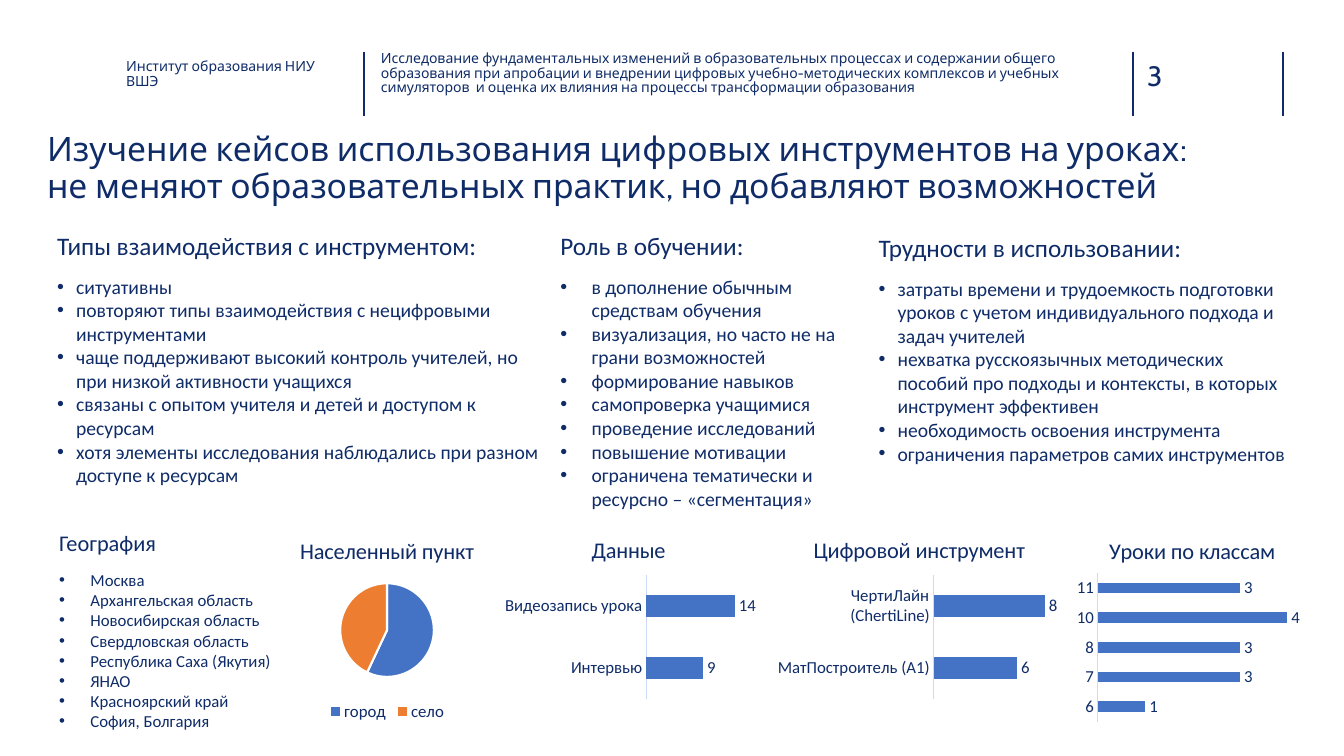
from lxml import etree
from pptx import Presentation
from pptx.chart.data import CategoryChartData
from pptx.dml.color import RGBColor
from pptx.enum.chart import XL_CHART_TYPE, XL_LABEL_POSITION, XL_LEGEND_POSITION, XL_TICK_MARK
from pptx.enum.shapes import MSO_CONNECTOR
from pptx.oxml import parse_xml
from pptx.oxml.ns import qn
from pptx.util import Cm, Pt

PIE = XL_CHART_TYPE.PIE
BAR = XL_CHART_TYPE.BAR_CLUSTERED
OUTSIDE = XL_LABEL_POSITION.OUTSIDE_END
BOTTOM = XL_LEGEND_POSITION.BOTTOM
NO_TICK = XL_TICK_MARK.NONE
STRAIGHT = MSO_CONNECTOR.STRAIGHT
CHART_NAMESPACE = "http://schemas.openxmlformats.org/drawingml/2006/chart"
NAVY, BLUE, ORANGE, PALE, WHITE = "0F2C68", "4472C4", "ED7D31", "CCDAF8", "FFFFFF"
HEADING_FONT, BODY_FONT = "Cabin", "Calibri"


def color(value):
    """Turn a hex string into a colour."""
    return RGBColor.from_string(value)


def style_font(font, size, name=BODY_FONT):
    """Set the face, size and navy colour of a font."""
    font.name, font.size, font.bold = name, Pt(size), False
    font.color.rgb = color(NAVY)


def write(para, text, size, name=BODY_FONT, spacing=None, after=0, bullet_indent=None):
    """Write formatted text into a paragraph, with line breaks and an optional bullet."""
    para.space_after = Pt(after)
    if spacing:
        para.line_spacing = spacing
    if bullet_indent:
        properties = para._p.get_or_add_pPr()
        properties.set("marL", str(Cm(bullet_indent)))
        properties.set("indent", str(-Cm(bullet_indent)))
        etree.SubElement(properties, qn("a:buFont")).set("typeface", "Arial")
        etree.SubElement(properties, qn("a:buChar")).set("char", "•")
    for number, line in enumerate(text.split("\n")):
        if number:
            para.add_line_break()
        span = para.add_run()
        span.text = line
        style_font(span.font, size, name)


def add_frame(page, area, margins=True):
    """Add a wrapping text box and return its text frame."""
    frame = page.shapes.add_textbox(*map(Cm, area)).text_frame
    frame.word_wrap = True
    if not margins:
        frame.margin_left = frame.margin_right = frame.margin_top = frame.margin_bottom = 0
    return frame


def add_label(page, area, text, size, spacing=0.9):
    """Add a marginless text in the heading font."""
    frame = add_frame(page, area, margins=False)
    write(frame.paragraphs[0], text, size, HEADING_FONT, spacing)


def add_header(page, area):
    """Add the institute, project name and page number between vertical rules."""
    left, top, width, height = area
    for offset in (5.99, 25.37, width):
        rule = page.shapes.add_connector(
            STRAIGHT, Cm(left + offset), Cm(top), Cm(left + offset), Cm(top + height))
        rule.line.color.rgb = color(NAVY)
        rule.line.width = Pt(1)
        etree.SubElement(rule._element.spPr, qn("a:effectLst"))
    add_label(page, (left, top + 0.2, 5.28, 1.14), "Институт образования НИУ ВШЭ", 10)
    add_label(page, (left + 6.42, top, 18.44, 1.85),
              "Исследование фундаментальных изменений в образовательных процессах и содержании "
              "общего образования при апробации и внедрении цифровых учебно-методических "
              "комплексов и учебных симуляторов\u00a0 и оценка их влияния на процессы "
              "трансформации образования", 10, 0.88)
    add_label(page, (left + 25.73, top + 0.17, 1.85, 0.86), "3", 20, 1)


def add_list(page, area, heading, items, heading_size=18, item_size=14, indent=0.48):
    """Add a heading with a bulleted list under it."""
    frame = add_frame(page, area)
    write(frame.paragraphs[0], heading, heading_size, after=9.8)
    for item in items:
        write(frame.add_paragraph(), item, item_size, bullet_indent=indent)


def set_plot_layout(chart, x, y, width, height):
    """Fix the inner plot area as fractions of the chart."""
    plot_area = chart._chartSpace.chart.plotArea
    for old in plot_area.findall(qn("c:layout")):
        plot_area.remove(old)
    values = (("layoutTarget", "inner"), ("xMode", "edge"), ("yMode", "edge"),
              ("x", x), ("y", y), ("w", width), ("h", height))
    inner = "".join(f'<c:{tag} val="{value}"/>' for tag, value in values)
    plot_area.insert(0, parse_xml(
        f'<c:layout xmlns:c="{CHART_NAMESPACE}"><c:manualLayout>{inner}'
        "</c:manualLayout></c:layout>"))


def add_chart(page, area, kind, title, values, layout):
    """Add a titled chart with one series and return it."""
    data = CategoryChartData()
    data.categories = list(values)
    data.add_series(title, list(values.values()))
    chart = page.shapes.add_chart(kind, *map(Cm, area), data).chart
    style_font(chart.font, 12)
    chart.has_title = True
    write(chart.chart_title.text_frame.paragraphs[0], title, 16)
    chart.has_legend = kind == PIE
    set_plot_layout(chart, *layout)
    return chart


def add_pie(page, area, title, values, layout):
    """Add a pie chart with a legend below."""
    chart = add_chart(page, area, PIE, title, values, layout)
    chart.legend.position = BOTTOM
    chart.legend.include_in_layout = False
    style_font(chart.legend.font, 12)
    for number, fill in enumerate((BLUE, ORANGE)):
        slice_format = chart.plots[0].series[0].points[number].format
        slice_format.fill.solid()
        slice_format.fill.fore_color.rgb = color(fill)
        slice_format.line.color.rgb = color(WHITE)
        slice_format.line.width = Pt(1.5)


def add_bars(page, area, title, values, layout, maximum):
    """Add a bar chart with value labels and no value axis."""
    chart = add_chart(page, area, BAR, title, values, layout)
    plot = chart.plots[0]
    plot.gap_width, plot.vary_by_categories, plot.has_data_labels = 182, False, True
    plot.data_labels.show_value = True
    plot.data_labels.position = OUTSIDE
    style_font(plot.data_labels.font, 12)
    fill = plot.series[0].format.fill
    fill.solid()
    fill.fore_color.rgb = color(BLUE)
    chart.value_axis.visible = chart.value_axis.has_major_gridlines = False
    chart.value_axis.minimum_scale, chart.value_axis.maximum_scale = 0, maximum
    axis = chart.category_axis
    axis.major_tick_mark = axis.minor_tick_mark = NO_TICK
    axis.format.line.color.rgb = color(PALE)
    axis.format.line.width = Pt(0.75)
    style_font(axis.tick_labels.font, 12)


def add_findings(page, left, top):
    """Add the three columns of findings."""
    add_list(page, (left, top, 12.67, 6.76), "Типы взаимодействия с инструментом:", (
        "ситуативны",
        "повторяют типы взаимодействия с нецифровыми инструментами",
        "чаще поддерживают высокий контроль учителей, но при низкой активности учащихся",
        "связаны с опытом учителя и детей и доступом к ресурсам",
        "хотя элементы исследования наблюдались при разном доступе к ресурсам"))
    add_list(page, (left + 12.68, top, 7.9, 7.52), "Роль в обучении:", (
        "в дополнение обычным средствам обучения",
        "визуализация, но часто не на грани возможностей",
        "формирование навыков", "самопроверка учащимися", "проведение исследований",
        "повышение мотивации", "ограничена тематически и ресурсно – «сегментация»"), indent=0.79)
    add_list(page, (left + 20.7, top + 0.05, 10.82, 6.32), "Трудности в использовании:", (
        "затраты времени и трудоемкость подготовки уроков с учетом индивидуального подхода "
        "и задач учителей",
        "нехватка русскоязычных методических пособий про подходы и контексты, в которых "
        "инструмент эффективен",
        "необходимость освоения инструмента", "ограничения параметров самих инструментов"))


def add_sample(page, left, top):
    """Add the geography list and the four charts describing the sample."""
    add_list(page, (left, top + 0.05, 6.1, 5.38), "География", (
        "Москва", "Архангельская область", "Новосибирская область", "Свердловская область",
        "Республика Саха (Якутия)", "ЯНАО", "Красноярский край", "София, Болгария"), 16, 12, 0.79)
    add_pie(page, (left + 5.01, top, 7.01, 5.13), "Населенный пункт",
            {"город": 57, "село": 43}, (0.33, 0.3, 0.34, 0.46))
    add_bars(page, (left + 11.41, top, 6.4, 4.55), "Данные",
             {"Интервью": 9, "Видеозапись урока": 14}, (0.57, 0.29, 0.4, 0.69), 16)
    add_bars(page, (left + 18.27, top, 7.32, 4.55), "Цифровой инструмент",
             {"МатПостроитель (А1)": 6, "ЧертиЛайн (ChertiLine)": 8}, (0.55, 0.29, 0.43, 0.69), 9)
    add_bars(page, (left + 25.68, top, 6.25, 5.13), "Уроки по классам",
             {"6": 1, "7": 3, "8": 3, "10": 4, "11": 3}, (0.12, 0.25, 0.86, 0.73), 4.5)


def main():
    """Build the slide and save the deck."""
    deck = Presentation()
    deck.slide_width, deck.slide_height = Cm(33.87), Cm(19.05)
    page = deck.slides.add_slide(deck.slide_layouts[6])
    add_header(page, (3.18, 1.3, 29.15, 1.62))
    add_label(page, (1.19, 3.35, 31.14, 1.78),
              "Изучение кейсов использования цифровых инструментов на уроках:\n"
              "не меняют образовательных практик, но добавляют возможностей", 24)
    add_findings(page, 1.19, 5.69)
    add_sample(page, 1.24, 13.16)
    deck.save("out.pptx")


if __name__ == "__main__":
    main()
